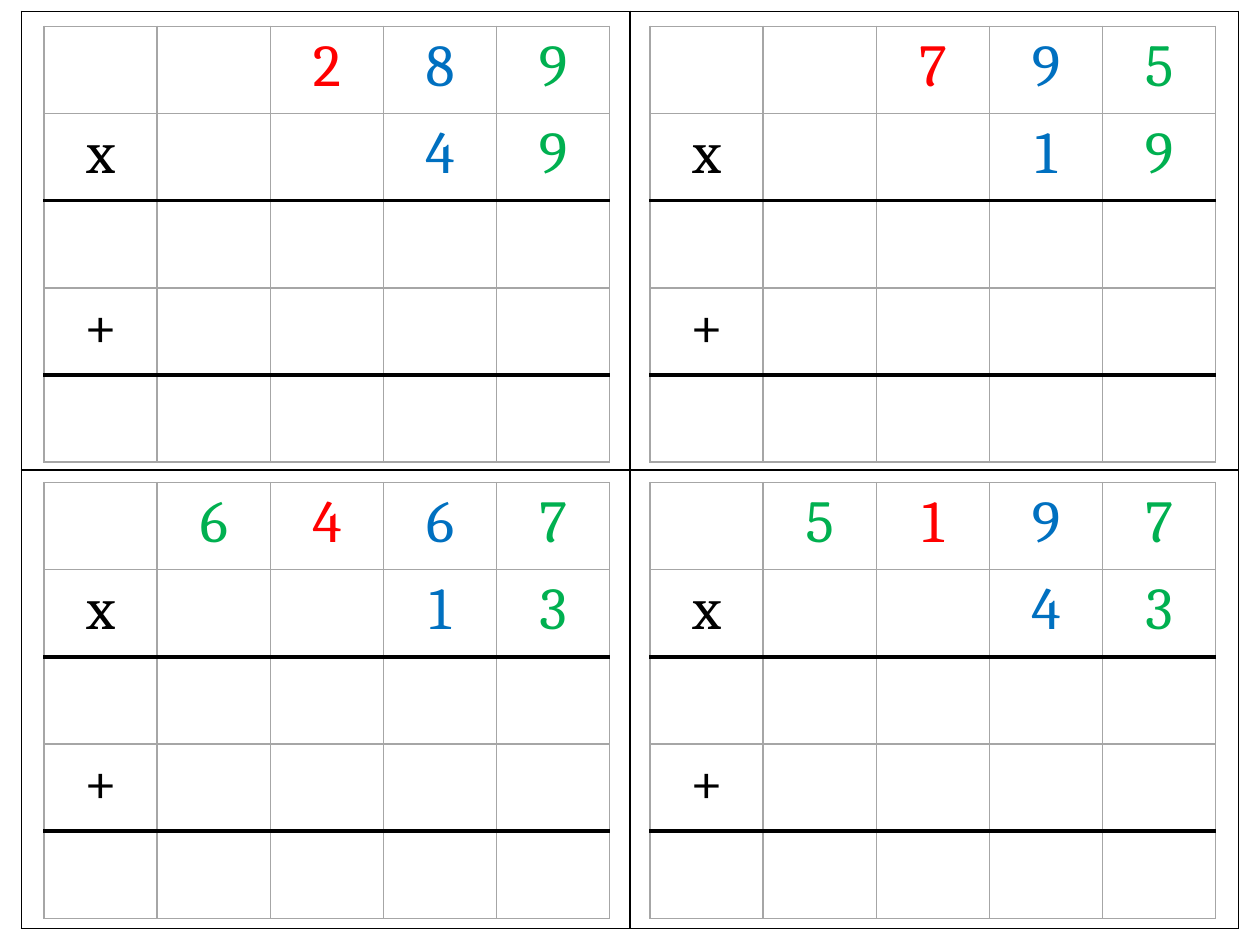
from dataclasses import dataclass
from itertools import product

from lxml import etree
from pptx import Presentation
from pptx import util as u
from pptx.dml.color import RGBColor
from pptx.enum import text
from pptx.oxml.ns import qn

BLACK = RGBColor(0x00, 0x00, 0x00)
GREY = RGBColor(0xA6, 0xA6, 0xA6)
WHITE = RGBColor(0xFF, 0xFF, 0xFF)
GREEN = RGBColor(0x00, 0xB0, 0x50)
RED = RGBColor(0xFF, 0x00, 0x00)
BLUE = RGBColor(0x00, 0x70, 0xC0)

PLACES = (BLACK, GREEN, RED, BLUE, GREEN)
FONT, SIZE = "Cambria", u.Pt(34)
SIDE = 5
RULED = (2, 4)  # rows with a heavy line above


@dataclass(frozen=True)
class Line:
    color: RGBColor
    width: float


@dataclass(frozen=True)
class Box:
    left: float
    top: float
    width: float
    height: float


@dataclass(frozen=True)
class Sum:
    top: str
    factor: str


THIN, HEAVY, FRAME = Line(GREY, 1), Line(BLACK, 2.25), Line(BLACK, 1)
PAGE = Box(0.17, 0.09, 9.66, 7.28)
LEFTS, TOPS = (0.35, 5.16), (0.21, 3.83)
WIDTH, HEIGHT = 4.49, 3.46
SUMS = (Sum("289", "49"), Sum("795", "19"),
        Sum("6467", "13"), Sum("5197", "43"))


def edge(cell, sides: dict[str, Line]) -> None:
    """Draw the cell's borders, keyed L, R, T and B in that order."""
    props = cell._tc.get_or_add_tcPr()
    for spot, (side, line) in enumerate(sides.items()):
        ln = etree.Element(qn(f"a:ln{side}"), w=str(u.Pt(line.width)))
        fill = etree.SubElement(ln, qn("a:solidFill"))
        etree.SubElement(fill, qn("a:srgbClr"), val=str(line.color))
        props.insert(spot, ln)


def add_grid(slide, box: Box, count: int):
    """Add a plain white table of count by count equal cells."""
    size = [u.Inches(n) for n in (box.left, box.top, box.width, box.height)]
    grid = slide.shapes.add_table(count, count, *size).table
    grid.first_row = grid.horz_banding = False
    for cell in grid.iter_cells():
        cell.fill.solid()
        cell.fill.fore_color.rgb = WHITE
    return grid


def write(cell, mark: str, color: RGBColor) -> None:
    cell.text_frame.text = mark
    para = cell.text_frame.paragraphs[0]
    para.alignment = text.PP_ALIGN.CENTER
    font = para.runs[0].font
    font.name, font.size, font.color.rgb = FONT, SIZE, color


def add_sum(slide, box: Box, item: Sum) -> None:
    grid = add_grid(slide, box, SIDE)
    rows = (item.top.rjust(SIDE), "x" + item.factor.rjust(SIDE - 1),
            "", "+", "")
    for r, marks in enumerate(rows):
        top = HEAVY if r in RULED else THIN
        low = HEAVY if r + 1 in RULED else THIN
        for c in range(SIDE):
            edge(grid.cell(r, c), {"L": THIN, "R": THIN, "T": top, "B": low})
        for c, mark in enumerate(marks):
            if mark != " ":
                write(grid.cell(r, c), mark, PLACES[c])


def main() -> None:
    deck = Presentation()
    deck.slide_width, deck.slide_height = u.Inches(10), u.Inches(7.5)
    slide = deck.slides.add_slide(deck.slide_layouts[6])
    for cell in add_grid(slide, PAGE, 2).iter_cells():
        edge(cell, dict.fromkeys("LRTB", FRAME))
    for (top, left), item in zip(product(TOPS, LEFTS), SUMS):
        add_sum(slide, Box(left, top, WIDTH, HEIGHT), item)
    deck.save("out.pptx")


if __name__ == "__main__":
    main()
